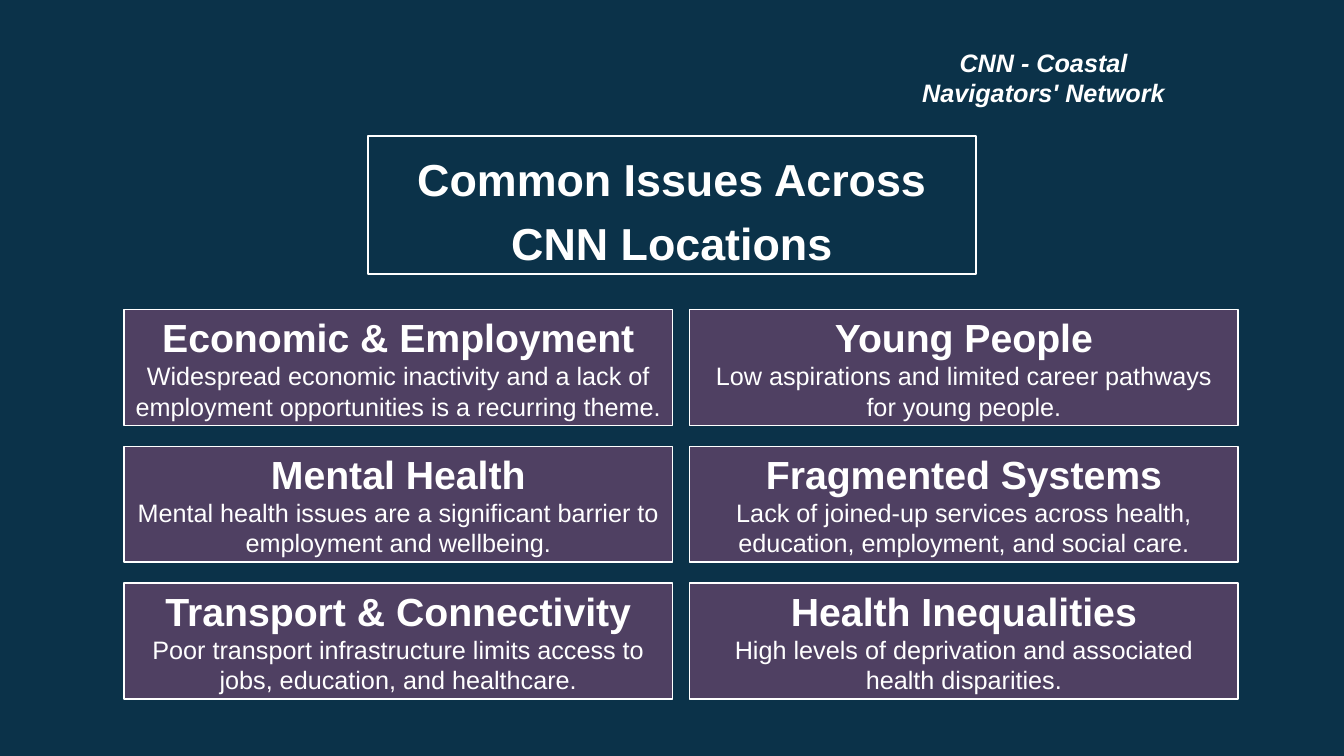
from pptx import Presentation
from pptx.dml.color import RGBColor
from pptx.enum import shapes, text
from pptx.util import Inches, Pt

NAVY = RGBColor(0x0B, 0x32, 0x49)
PLUM = RGBColor(0x4F, 0x40, 0x62)
WHITE = RGBColor(0xFF, 0xFF, 0xFF)

ISSUE_COLUMNS = [
    [
        ("Economic & Employment",
         "Widespread economic inactivity and a lack of employment opportunities is a recurring theme."),
        ("Mental Health",
         "Mental health issues are a significant barrier to employment and wellbeing."),
        ("Transport & Connectivity",
         "Poor transport infrastructure limits access to jobs, education, and healthcare."),
    ],
    [
        ("Young People",
         "Low aspirations and limited career pathways for young people."),
        ("Fragmented Systems",
         "Lack of joined-up services across health, education, employment, and social care."),
        ("Health Inequalities",
         "High levels of deprivation and associated health disparities."),
    ],
]


def add_centred_run(paragraph, wording, size, bold=True, italic=False):
    paragraph.alignment = text.PP_ALIGN.CENTER
    run = paragraph.add_run()
    run.text = wording
    run.font.name = "Arial"
    run.font.size = Pt(size)
    run.font.bold = bold
    run.font.italic = italic
    run.font.color.rgb = WHITE


def prepare_frame(shape):
    """Wrap the text at a fixed size and centre it vertically."""
    frame = shape.text_frame
    frame.word_wrap = True
    frame.auto_size = text.MSO_AUTO_SIZE.NONE
    frame.vertical_anchor = text.MSO_ANCHOR.MIDDLE
    return frame


prs = Presentation()
prs.slide_width = Inches(13.33)
prs.slide_height = Inches(7.5)
slide = prs.slides.add_slide(prs.slide_layouts[5])
slide.background.fill.solid()
slide.background.fill.fore_color.rgb = NAVY

# Title
title = slide.shapes.title
title.left, title.top = Inches(3.65), Inches(1.35)
title.width, title.height = Inches(6.03), Inches(1.37)
title.line.color.rgb = WHITE
title.line.width = Pt(1)
heading = prepare_frame(title).paragraphs[0]
heading.line_spacing = Pt(46.2)
add_centred_run(heading, "Common Issues Across CNN Locations", 32)

# Network name
network = slide.shapes.add_textbox(Inches(8.95), Inches(0.24), Inches(2.8), Inches(1.05))
add_centred_run(prepare_frame(network).paragraphs[0],
                "CNN - Coastal Navigators' Network", 18, italic=True)

# Issue cards
for column, issues in enumerate(ISSUE_COLUMNS):
    for row, (issue, summary) in enumerate(issues):
        card = slide.shapes.add_shape(
            shapes.MSO_SHAPE.RECTANGLE,
            Inches(1.23 + 5.61 * column), Inches(3.07 + 1.357 * row),
            Inches(5.44), Inches(1.15))
        card.shadow.inherit = False
        card.fill.solid()
        card.fill.fore_color.rgb = PLUM
        card.line.color.rgb = WHITE
        card.line.width = Pt(1)
        frame = prepare_frame(card)
        add_centred_run(frame.paragraphs[0], issue, 28)
        add_centred_run(frame.add_paragraph(), summary, 18, bold=False)

prs.save("out.pptx")
